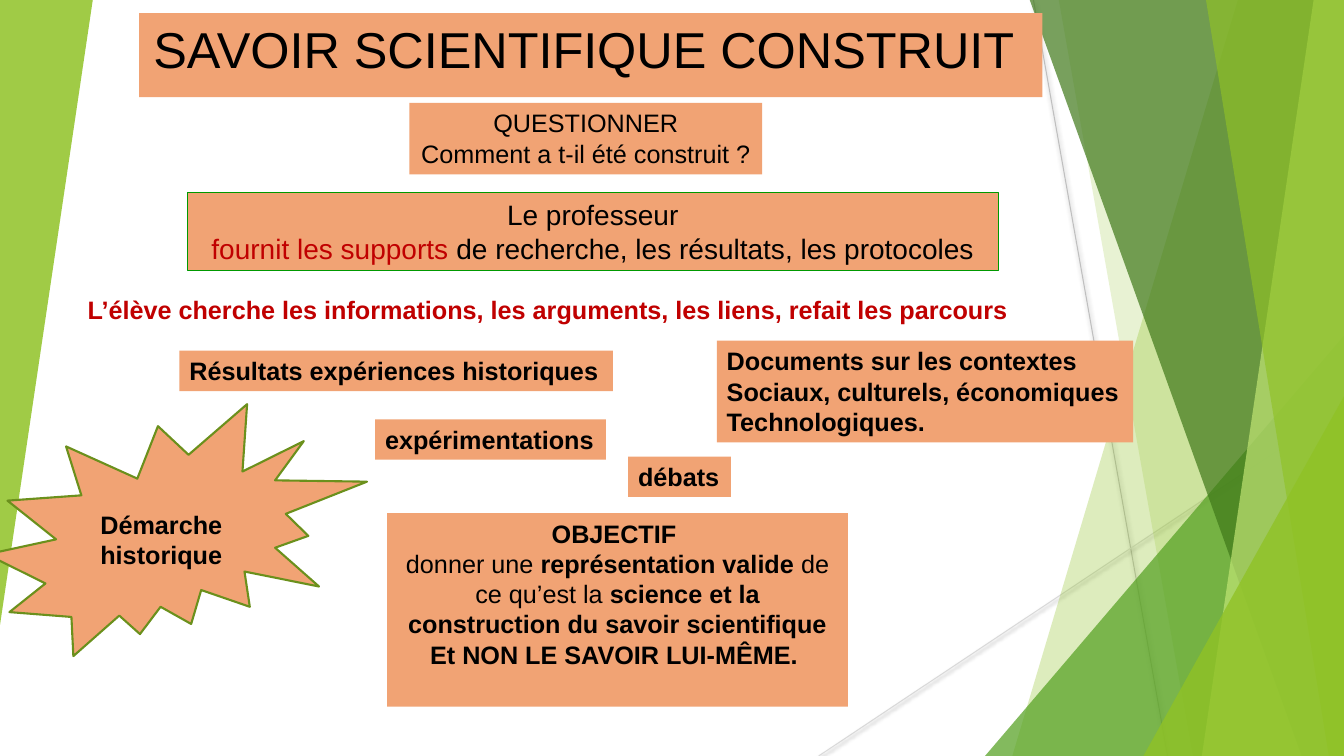
"""Build the slide on how scientific knowledge is constructed."""
import dataclasses

import lxml.etree
import pptx
import pptx.dml.color
import pptx.enum.shapes
import pptx.enum.text
import pptx.oxml.ns
import pptx.util

Inches = pptx.util.Inches
Pt = pptx.util.Pt
Kind = pptx.enum.shapes.MSO_SHAPE
Align = pptx.enum.text.PP_ALIGN
qn = pptx.oxml.ns.qn


@dataclasses.dataclass(frozen=True)
class Theme:
    font: str = "Arial"
    title: int = 36
    lead: int = 20
    body: int = 18
    ink: str = "000000"
    red: str = "C00000"
    peach: str = "F1A374"
    edge: str = "009900"
    moss: str = "6B901C"
    lime: str = "90C226"
    leaf: str = "54A021"
    dark: str = "3F7819"
    pale: str = "C0E474"
    gray: str = "BFBFBF"
    mist: str = "D9D9D9"


def tint(color):
    return pptx.dml.color.RGBColor.from_string(color)


def add_node(parent, tag, **values):
    return lxml.etree.SubElement(parent, qn(tag), {k: str(v) for k, v in values.items()})


class Deck:
    def __init__(self, theme):
        self.theme = theme
        self.show = pptx.Presentation()
        self.show.slide_width = Inches(13.33)
        self.show.slide_height = Inches(7.5)
        self.slide = self.show.slides.add_slide(self.show.slide_layouts[5])
        self.shapes = self.slide.shapes

    def paint(self, shape, fill, alpha=100, line=None, width=0.75):
        shape.shadow.inherit = False
        shape.fill.solid()
        shape.fill.fore_color.rgb = tint(fill)
        if alpha < 100:
            color = shape.element.spPr.find(".//" + qn("a:srgbClr"))
            add_node(color, "a:alpha", val=alpha * 1000)
        if line:
            shape.line.color.rgb = tint(line)
            shape.line.width = Pt(width)
        else:
            shape.line.fill.background()

    def figure(self, kind, spot, fill, alpha=100, line=None, width=0.75):
        shape = self.shapes.add_shape(kind, *map(Inches, spot))
        self.paint(shape, fill, alpha, line, width)
        return shape

    def wedge(self, spot, fill, alpha, turn=0):
        shape = self.figure(Kind.ISOSCELES_TRIANGLE, spot, fill, alpha)
        shape.adjustments[0] = 1
        shape.rotation = turn

    def band(self, top, foot, fill, alpha):
        points = [(top, -0.01), (13.33, -0.01), (13.33, 7.5), (foot, 7.5)]
        points = [(Inches(x), Inches(y)) for x, y in points]
        form = self.shapes.build_freeform(*points[0])
        form.add_line_segments(points[1:], close=True)
        self.paint(form.convert_to_shape(), fill, alpha)

    def ray(self, start, end, color):
        ends = map(Inches, start + end)
        line = self.shapes.add_connector(pptx.enum.shapes.MSO_CONNECTOR.STRAIGHT, *ends)
        line.line.color.rgb = tint(color)
        line.line.width = Pt(0.75)
        effect = add_node(line.element.spPr, "a:effectLst")
        shade = add_node(effect, "a:outerShdw", blurRad=Pt(3.1), dist=Pt(1.6),
                         dir=90 * 60000, rotWithShape=0)
        add_node(add_node(shade, "a:srgbClr", val="000000"), "a:alpha", val=38000)

    def letter(self, shape, lines, size, align=Align.LEFT, wrap=False):
        frame = shape.text_frame
        frame.word_wrap = wrap
        frame.auto_size = pptx.enum.text.MSO_AUTO_SIZE.SHAPE_TO_FIT_TEXT
        frame.vertical_anchor = pptx.enum.text.MSO_ANCHOR.TOP
        frame.text = "\n".join("" for _ in lines)
        for para, parts in zip(frame.paragraphs, lines):
            para.alignment = align
            for text, bold, color in parts:
                run = para.add_run()
                run.text = text
                run.font.name = self.theme.font
                run.font.size = Pt(size)
                run.font.bold = bold
                run.font.color.rgb = tint(color)

    def title(self, spot, text):
        shape = self.shapes.title
        shape.element.getparent().append(shape.element)
        shape.left, shape.top, shape.width, shape.height = map(Inches, spot)
        shape.fill.solid()
        shape.fill.fore_color.rgb = tint(self.theme.peach)
        self.letter(shape, [plain(text)], self.theme.title, Align.CENTER)

    def box(self, spot, lines, size=None, align=Align.LEFT, wrap=False, line=None):
        shape = self.figure(Kind.RECTANGLE, spot, self.theme.peach, line=line)
        self.letter(shape, lines, size or self.theme.body, align, wrap)

    def note(self, spot, lines, align=Align.LEFT, wrap=False):
        shape = self.shapes.add_textbox(*map(Inches, spot))
        self.letter(shape, lines, self.theme.body, align, wrap)


def plain(text, color=Theme.ink):
    return [(text, False, color)]


def strong(text, color=Theme.ink):
    return [(text, True, color)]


def draw_decor(deck):
    look = deck.theme
    deck.ray((10.25, 0), (11.58, 7.5), look.gray)
    deck.ray((13.33, 4.03), (8.12, 7.5), look.mist)
    deck.band(12.28, 10.04, look.lime, 30)
    deck.band(10.5, 11.83, look.lime, 20)
    deck.wedge((9.77, 3.33, 3.56, 4.17), look.leaf, 72)
    deck.band(10.21, 12.91, look.dark, 70)
    deck.band(13.03, 11.92, look.pale, 70)
    deck.band(11.96, 13.18, look.lime, 65)
    deck.wedge((11.34, 3.93, 1.99, 3.57), look.lime, 80)
    deck.wedge((0, 0, 0.92, 6.2), look.lime, 85, 180)


def main():
    look = Theme()
    deck = Deck(look)
    draw_decor(deck)
    deck.figure(Kind.EXPLOSION2, (-0.13, 4.01, 3.77, 2.5), look.peach,
                line=look.moss, width=1.5)
    deck.title((1.38, 0.13, 8.96, 0.71), "SAVOIR SCIENTIFIQUE CONSTRUIT ")
    deck.note((0.27, 5, 2.66, 0.71), [strong("Démarche historique")], Align.CENTER, True)

    sources = [
        ((1.78, 3.48, 4.3, 0.4), ["Résultats expériences historiques"]),
        ((7.11, 3.38, 4.13, 1.01), ["Documents sur les contextes",
                                    "Sociaux, culturels, économiques",
                                    "Technologiques."]),
        ((3.72, 4.16, 2.29, 0.4), ["expérimentations"]),
        ((6.23, 4.53, 1.02, 0.4), ["débats"]),
    ]
    for spot, lines in sources:
        deck.box(spot, [strong(text) for text in lines])

    goal = [
        strong("OBJECTIF "),
        plain("donner une ") + strong("représentation valide ")
        + plain("de ce qu’est la ")
        + strong("science et la construction du savoir scientifique"),
        strong("Et NON LE SAVOIR LUI-MÊME. "),
    ]
    deck.box((3.84, 5.09, 4.57, 1.92), goal, align=Align.CENTER, wrap=True)
    deck.note((0.77, 2.87, 9.35, 0.4), [strong(
        "L’élève cherche les informations, les arguments, les liens, refait les parcours",
        look.red)])
    deck.box((4.06, 1.02, 3.5, 0.71),
             [plain("QUESTIONNER"), plain("Comment a t-il été construit ?")],
             align=Align.CENTER)
    teacher = [
        plain("Le professeur"),
        plain("fournit les supports ", look.red)
        + plain("de recherche, les résultats, les protocoles"),
    ]
    deck.box((1.86, 1.91, 8.04, 0.77), teacher, look.lead, Align.CENTER, True, look.edge)
    deck.show.save("out.pptx")


if __name__ == "__main__":
    main()
